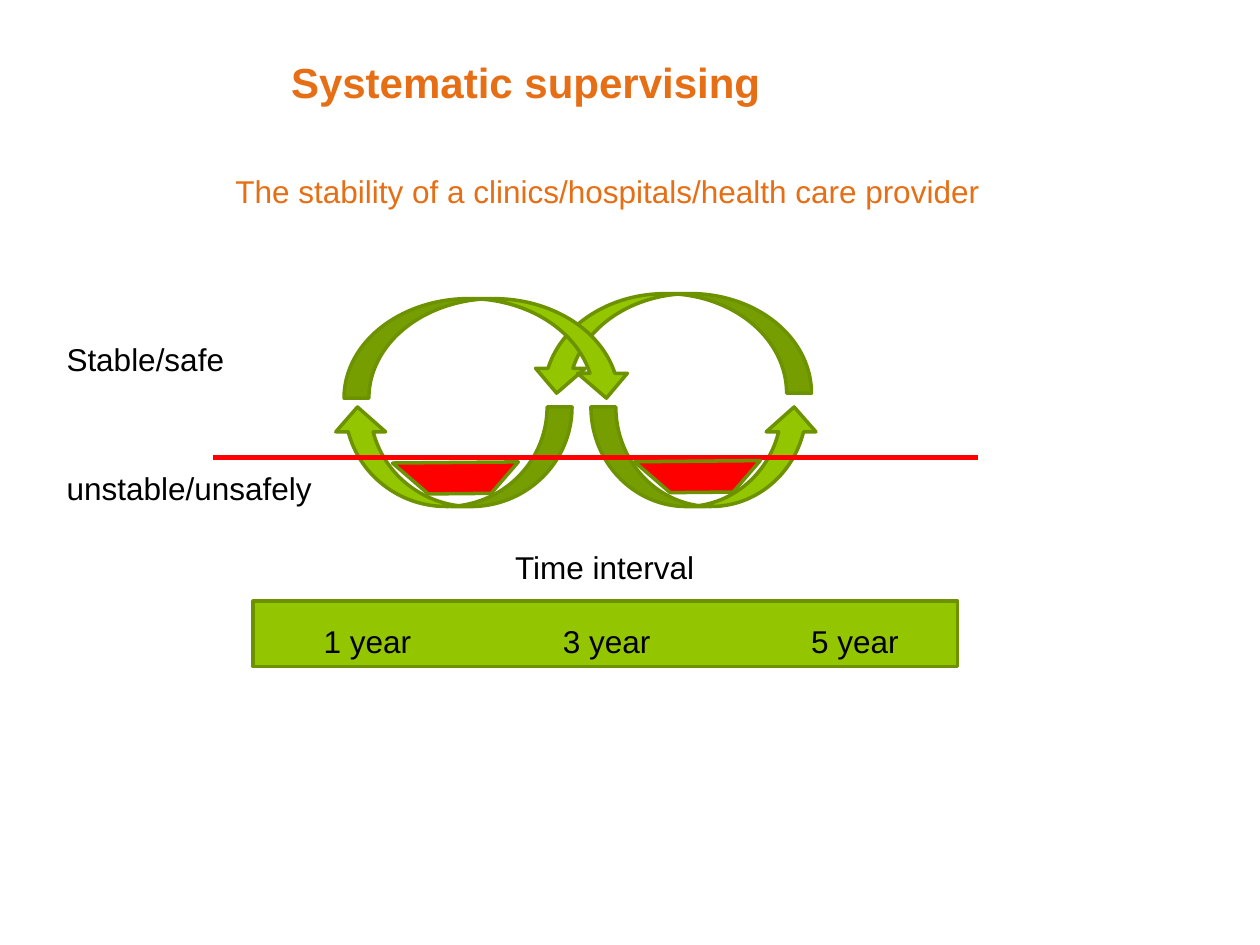
from dataclasses import dataclass
from lxml.etree import SubElement
from pptx import Presentation
from pptx.dml.color import RGBColor
from pptx.enum.shapes import MSO_CONNECTOR, MSO_SHAPE
from pptx.enum.text import MSO_ANCHOR, MSO_AUTO_SIZE, PP_ALIGN
from pptx.oxml.ns import qn
from pptx.util import Inches, Pt


@dataclass(frozen=True)
class Theme:
    font: str = "Arial"
    orange: RGBColor = RGBColor(0xE6, 0x6E, 0x14)
    black: RGBColor = RGBColor(0, 0, 0)
    green: RGBColor = RGBColor(0x94, 0xC6, 0x00)
    outline: RGBColor = RGBColor(0x6D, 0x92, 0x00)
    red: RGBColor = RGBColor(0xFF, 0, 0)
    title_size: int = 24
    text_size: int = 18
    outline_width: int = 2
    limit_width: int = 3


THEME = Theme()


def style_text(paragraph, size, color, bold=False):
    paragraph.alignment = PP_ALIGN.LEFT
    font = paragraph.font
    font.name, font.size, font.bold = THEME.font, Pt(size), bold
    font.color.rgb = color


def set_title(slide, text, left, top, width, height):
    title = slide.shapes.title
    title.left, title.top = Inches(left), Inches(top)
    title.width, title.height = Inches(width), Inches(height)
    frame = title.text_frame
    frame.text = text
    frame.auto_size = MSO_AUTO_SIZE.NONE
    frame.vertical_anchor = MSO_ANCHOR.BOTTOM
    frame.margin_left = frame.margin_right = 0
    frame.margin_top = frame.margin_bottom = 0
    style_text(frame.paragraphs[0], THEME.title_size, THEME.orange, bold=True)


def add_label(slide, text, left, top, width, color=THEME.black):
    label = slide.shapes.add_textbox(
        Inches(left), Inches(top), Inches(width), Inches(0.4))
    frame = label.text_frame
    frame.text = text
    frame.word_wrap = False
    frame.auto_size = MSO_AUTO_SIZE.SHAPE_TO_FIT_TEXT
    style_text(frame.paragraphs[0], THEME.text_size, color)


def add_outlined(slide, kind, left, top, width, height, fill=THEME.green, rotation=0):
    shape = slide.shapes.add_shape(
        kind, Inches(left), Inches(top), Inches(width), Inches(height))
    shape.shadow.inherit = False
    shape.fill.solid()
    shape.fill.fore_color.rgb = fill
    shape.line.color.rgb = THEME.outline
    shape.line.width = Pt(THEME.outline_width)
    shape.rotation = rotation
    return shape


def add_cycle_arrow(slide, left, top, width, rotation=0, mirrored=False):
    arrow = add_outlined(slide, MSO_SHAPE.CURVED_UP_ARROW, left, top, width, 0.79,
                         rotation=rotation)
    if mirrored:
        arrow.element.spPr.find(qn("a:xfrm")).set("flipH", "1")


def add_limit_line(slide, start, end, height):
    limit = slide.shapes.add_connector(
        MSO_CONNECTOR.STRAIGHT, Inches(start), Inches(height), Inches(end), Inches(height))
    limit.line.color.rgb = THEME.red
    limit.line.width = Pt(THEME.limit_width)
    SubElement(limit.element.spPr, qn("a:effectLst"))


def main():
    deck = Presentation()
    deck.slide_width, deck.slide_height = Inches(10), Inches(7.5)
    slide = deck.slides.add_slide(deck.slide_layouts.get_by_name("Title Only"))

    set_title(slide, "Systematic supervising", 2.31, 0.13, 4.5, 0.72)
    add_label(slide, "The stability of a clinics/hospitals/health care provider",
              1.77, 1.32, 6.29, THEME.orange)

    add_cycle_arrow(slide, 4.69, 3.23, 1.81)
    add_cycle_arrow(slide, 4.22, 2.33, 2.22, rotation=180)
    add_cycle_arrow(slide, 2.64, 3.23, 1.9, mirrored=True)
    add_cycle_arrow(slide, 2.73, 2.37, 2.28, rotation=180, mirrored=True)
    add_limit_line(slide, 1.69, 7.76, 3.63)

    add_outlined(slide, MSO_SHAPE.RECTANGLE, 2.01, 4.77, 5.59, 0.52)
    for years, left in ((1, 2.47), (3, 4.37), (5, 6.34)):
        add_label(slide, f"{years} year", left, 4.89, 0.9)
    add_label(slide, "Time interval", 3.99, 4.3, 1.64)
    add_label(slide, "unstable/unsafely", 0.43, 3.67, 2.17)
    add_label(slide, "Stable/safe", 0.43, 2.65, 1.46)

    for left, top in ((5.16, 3.33), (3.24, 3.34)):
        add_outlined(slide, MSO_SHAPE.DIAGONAL_STRIPE, left, top, 0.75, 0.66,
                     fill=THEME.red, rotation=220.8)

    deck.save("out.pptx")


if __name__ == "__main__":
    main()
